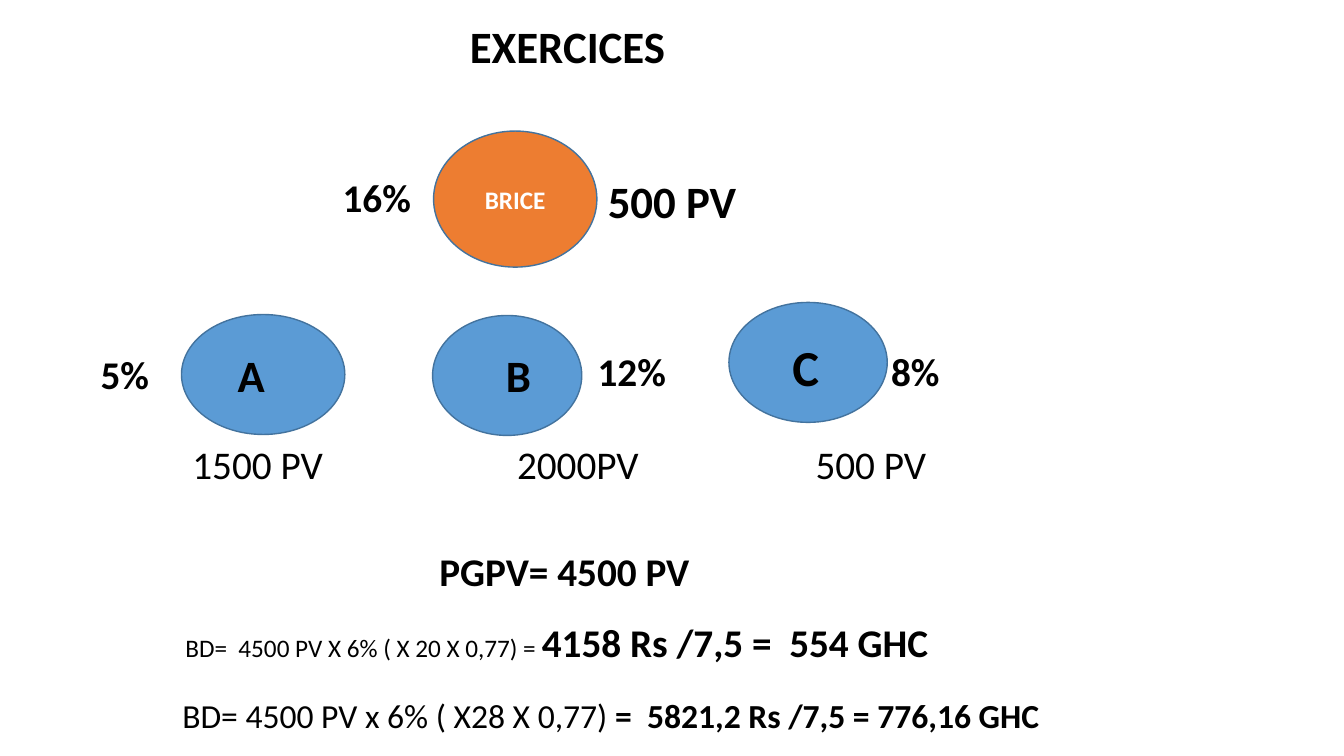
from pptx import Presentation
from pptx.dml.color import RGBColor
from pptx.enum.shapes import MSO_SHAPE
from pptx.enum.text import MSO_ANCHOR, MSO_AUTO_SIZE, PP_ALIGN
from pptx.util import Inches, Pt

ELLIPSE = MSO_SHAPE.OVAL
TOP, MIDDLE = MSO_ANCHOR.TOP, MSO_ANCHOR.MIDDLE
LEFT, CENTER = PP_ALIGN.LEFT, PP_ALIGN.CENTER
NO_FIT = MSO_AUTO_SIZE.NONE

BLACK = RGBColor(0x00, 0x00, 0x00)
WHITE = RGBColor(0xFF, 0xFF, 0xFF)
ORANGE = RGBColor(0xED, 0x7D, 0x31)
BLUE = RGBColor(0x5B, 0x9B, 0xD5)
OUTLINE = RGBColor(0x43, 0x73, 0x9E)

prs = Presentation()
prs.slide_width, prs.slide_height = Inches(13.33), Inches(7.5)
s = prs.slides.add_slide(prs.slide_layouts[5])  # Title Only


def write(sp, runs, color=BLACK, align=LEFT, anchor=TOP):
    """Fill a shape with one paragraph of (text, size, bold) runs."""
    tf = sp.text_frame
    tf.word_wrap = True
    tf.auto_size = NO_FIT
    tf.vertical_anchor = anchor
    p = tf.paragraphs[0]
    p.alignment = align
    for text, size, bold in runs:
        r = p.add_run()
        r.text = text
        r.font.name = "Calibri"
        r.font.size = Pt(size)
        r.font.bold = bold
        r.font.color.rgb = color


def add_ellipse(x, y, w, h, fill):
    sp = s.shapes.add_shape(ELLIPSE, Inches(x), Inches(y), Inches(w), Inches(h))
    sp.shadow.inherit = False
    sp.fill.solid()
    sp.fill.fore_color.rgb = fill
    sp.line.color.rgb = OUTLINE
    sp.line.width = Pt(1)
    return sp


# Title
title = s.shapes.title
title.left, title.top = Inches(4.56), Inches(0.14)
title.width, title.height = Inches(6), Inches(0.64)
write(title, [("EXERCICES", 32, True)])

# Sponsor at the top, three members below
brice = add_ellipse(4.3, 1.3, 1.62, 1.35, ORANGE)
write(brice, [("BRICE", 18, True)], WHITE, CENTER, MIDDLE)
for x, y, w in [(1.8, 3.12, 1.62), (4.29, 3.13, 1.48), (7.23, 3, 1.57)]:
    add_ellipse(x, y, w, 1.19, BLUE)

# Labels and results: left, top, width, runs
texts = [
    # Member names
    (2.26, 3.4, 0.8, [("A", 32, True)]),
    (4.92, 3.4, 0.8, [("B", 32, True)]),
    (7.76, 3.29, 0.8, [("C", 36, True)]),
    # Volumes
    (5.93, 1.67, 2.25, [("500 PV", 32, True)]),
    (1.81, 4.32, 2.25, [("1500 PV", 28, False)]),
    (5.03, 4.32, 2.25, [("2000PV", 28, False)]),
    (7.99, 4.32, 2.25, [("500 PV", 28, False)]),
    # Percentages
    (3.3, 1.67, 1, [("16%", 28, True)]),
    (0.9, 3.43, 1, [("5%", 28, True)]),
    (5.83, 3.4, 1, [("12%", 28, True)]),
    (8.74, 3.4, 1, [("8%", 28, True)]),
    # Group total and bonus calculations
    (4.26, 5.38, 3.29, [("PGPV= 4500 PV", 28, True)]),
    (1.74, 6.08, 9.99, [("BD=  4500 PV X 6% ( X 20 X 0,77) = ", 18, False),
                        ("4158 Rs /7,5 =  554 GHC", 28, True)]),
    (1.71, 6.84, 8.86, [("BD= 4500 PV x 6% ( X28 X 0,77) ", 24, False),
                        ("=  5821,2 Rs /7,5 = 776,16 GHC", 24, True)]),
]
for x, y, w, runs in texts:
    height = 0.1 + max(size for _, size, _ in runs) / 60
    write(s.shapes.add_textbox(Inches(x), Inches(y), Inches(w), Inches(height)), runs)

prs.save("out.pptx")
